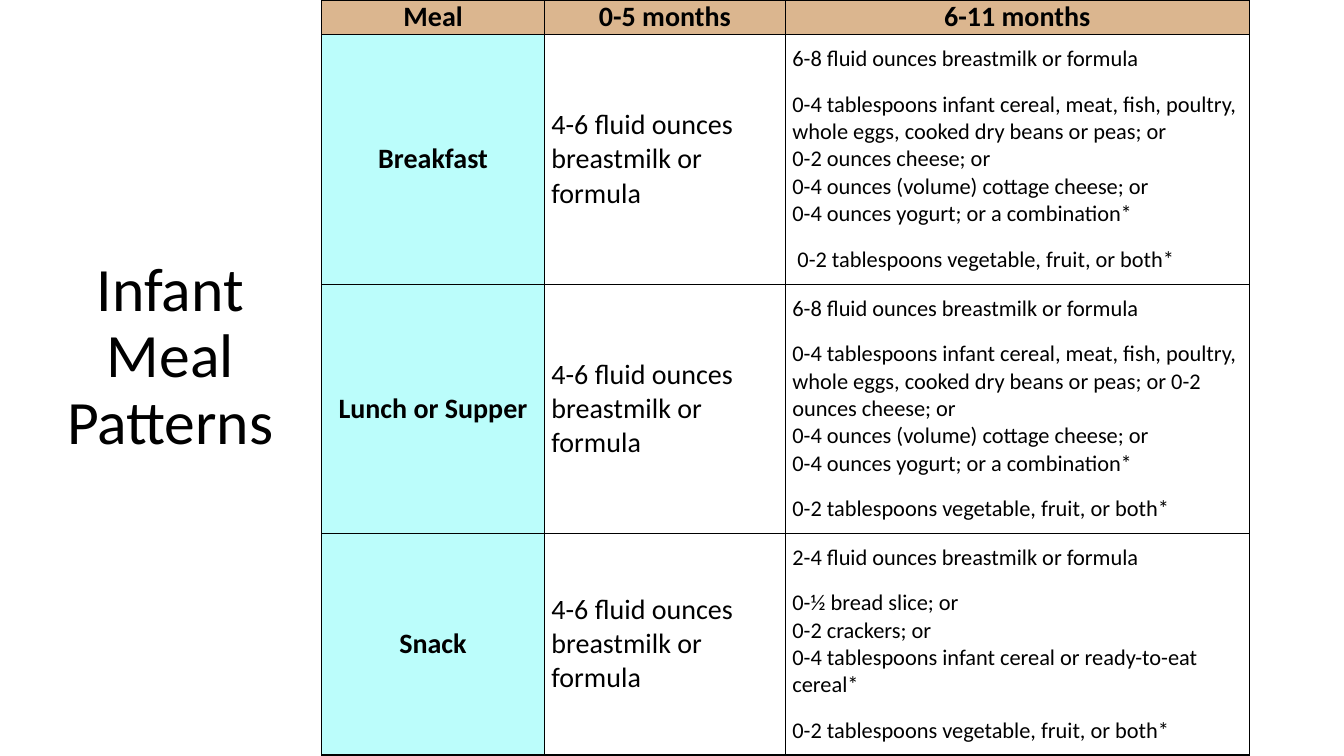
from dataclasses import dataclass
from typing import Optional

from lxml.etree import SubElement
from pptx import Presentation
from pptx.dml.color import RGBColor
from pptx.enum.text import MSO_ANCHOR, MSO_AUTO_SIZE, PP_ALIGN
from pptx.oxml.ns import qn
from pptx.table import _Cell
from pptx.text.text import _Paragraph
from pptx.util import Inches, Pt

BLACK = RGBColor(0x00, 0x00, 0x00)
TAN = RGBColor(0xDB, 0xB6, 0x8F)
AQUA = RGBColor(0xBB, 0xFD, 0xFB)
FONT = "Calibri"
GROUP_GAP = Pt(12.8)

MILK = "6-8 fluid ounces breastmilk or formula"
YOUNG_MILK = "4-6 fluid ounces breastmilk or formula"
PROTEIN = ("0-4 tablespoons infant cereal, meat, fish, poultry, "
           "whole eggs, cooked dry beans or peas; or")
CHEESE = "0-2 ounces cheese; or"
DAIRY = ["0-4 ounces (volume) cottage cheese; or",
         "0-4 ounces yogurt; or a combination*"]
PRODUCE = "0-2 tablespoons vegetable, fruit, or both*"


@dataclass
class Meal:
    name: str
    height: float
    groups: list[list[str]]


@dataclass
class CellStyle:
    size: float
    bold: bool = False
    align: PP_ALIGN = PP_ALIGN.LEFT
    fill: Optional[RGBColor] = None
    space_after: float = 0


HEADER = CellStyle(20, True, PP_ALIGN.CENTER, TAN, 8)
NAME = CellStyle(20, True, PP_ALIGN.CENTER, AQUA)
YOUNG = CellStyle(20)
OLDER = CellStyle(16)

HEADINGS = ["Meal", "0-5 months", "6-11 months"]
COL_WIDTHS = [2.21, 2.39, 4.6]
HEADER_HEIGHT = 0.34
MEALS = [
    Meal("Breakfast", 2.48, [[MILK], [PROTEIN, CHEESE, *DAIRY], [" " + PRODUCE]]),
    Meal("Lunch or Supper", 2.47, [[MILK], [f"{PROTEIN} {CHEESE}", *DAIRY], [PRODUCE]]),
    Meal("Snack", 2.2, [
        ["2-4 fluid ounces breastmilk or formula"],
        ["0-½ bread slice; or", "0-2 crackers; or",
         "0-4 tablespoons infant cereal or ready-to-eat cereal*"],
        [PRODUCE],
    ]),
]


def format_paragraph(p: _Paragraph, size: float, bold: bool, align: PP_ALIGN) -> None:
    p.alignment = align
    for r in p.runs:
        r.font.name = FONT
        r.font.size = Pt(size)
        r.font.bold = bold
        r.font.color.rgb = BLACK


def add_borders(cell: _Cell) -> None:
    props = cell._tc.get_or_add_tcPr()
    for index, side in enumerate(("a:lnL", "a:lnR", "a:lnT", "a:lnB")):
        line = SubElement(props, qn(side), w=str(Pt(1)))
        fill = SubElement(line, qn("a:solidFill"))
        SubElement(fill, qn("a:srgbClr"), val=str(BLACK))
        props.remove(line)
        props.insert(index, line)


def fill_cell(cell: _Cell, groups: list[list[str]], style: CellStyle) -> None:
    cell.vertical_anchor = MSO_ANCHOR.MIDDLE
    cell.margin_left = cell.margin_right = Inches(0.07)
    cell.margin_top = cell.margin_bottom = 0
    if style.fill is None:
        cell.fill.background()
    else:
        cell.fill.solid()
        cell.fill.fore_color.rgb = style.fill
    add_borders(cell)
    tf = cell.text_frame
    tf.text = "\n".join(line for group in groups for line in group)
    for p in tf.paragraphs:
        format_paragraph(p, style.size, style.bold, style.align)
        p.space_after = Pt(style.space_after)
    start = 0
    for group in groups[:-1]:
        start += len(group)
        tf.paragraphs[start].space_before = GROUP_GAP


def main() -> None:
    prs = Presentation()
    prs.slide_width, prs.slide_height = Inches(13.33), Inches(7.5)
    s = prs.slides.add_slide(prs.slide_layouts[5])

    title = s.shapes.title
    title.left, title.top = Inches(0.46), Inches(2.51)
    title.width, title.height = Inches(2.46), Inches(3.69)
    tf = title.text_frame
    tf.text = "Infant Meal Patterns"
    tf.word_wrap = True
    tf.auto_size = MSO_AUTO_SIZE.NONE
    tf.vertical_anchor = MSO_ANCHOR.TOP
    p = tf.paragraphs[0]
    p.line_spacing = 0.9
    format_paragraph(p, 44, False, PP_ALIGN.CENTER)

    table = s.shapes.add_table(len(MEALS) + 1, len(HEADINGS), Inches(3.19), 0,
                               Inches(sum(COL_WIDTHS)), Inches(7.5)).table
    table.first_row = table.horz_banding = False
    for col, width in zip(table.columns, COL_WIDTHS):
        col.width = Inches(width)
    table.rows[0].height = Inches(HEADER_HEIGHT)
    for col, heading in enumerate(HEADINGS):
        fill_cell(table.cell(0, col), [[heading]], HEADER)
    for row, meal in enumerate(MEALS, start=1):
        table.rows[row].height = Inches(meal.height)
        fill_cell(table.cell(row, 0), [[meal.name]], NAME)
        fill_cell(table.cell(row, 1), [[YOUNG_MILK]], YOUNG)
        fill_cell(table.cell(row, 2), meal.groups, OLDER)

    prs.save("out.pptx")


if __name__ == "__main__":
    main()
